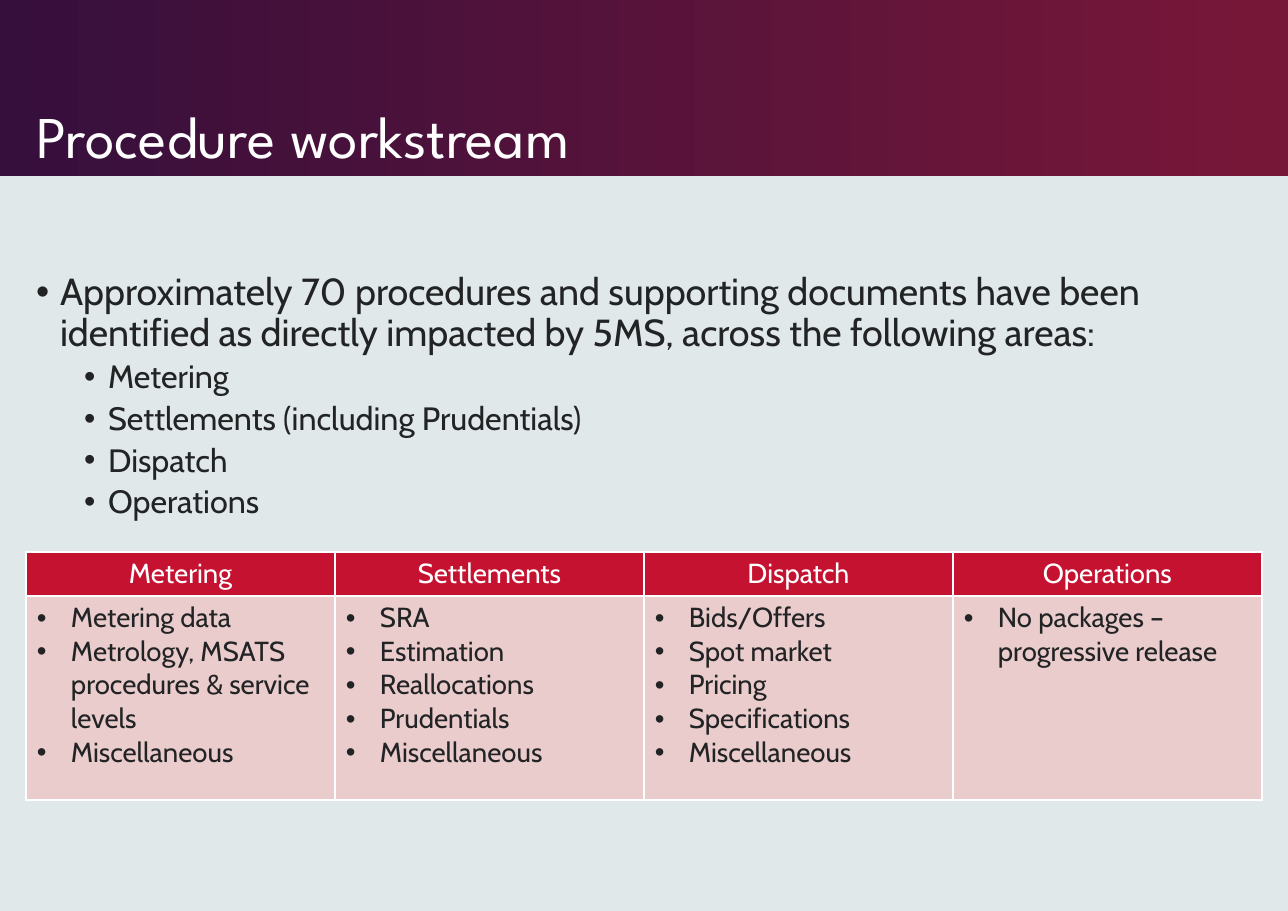
from lxml import etree
from pptx import Presentation
from pptx.dml.color import RGBColor
from pptx.enum.shapes import MSO_SHAPE
from pptx.enum.text import MSO_ANCHOR, MSO_AUTO_SIZE, PP_ALIGN
from pptx.oxml.ns import qn
from pptx.util import Emu, Pt

RECTANGLE = MSO_SHAPE.RECTANGLE
TOP, BOTTOM = MSO_ANCHOR.TOP, MSO_ANCHOR.BOTTOM
NO_AUTOFIT = MSO_AUTO_SIZE.NONE
LEFT, CENTER = PP_ALIGN.LEFT, PP_ALIGN.CENTER

EMU_PER_PX = 8298
BACKGROUND = RGBColor(0xE0, 0xE8, 0xEA)
PURPLE = RGBColor(0x36, 0x0F, 0x3C)
BURGUNDY = RGBColor(0x77, 0x17, 0x38)
CRIMSON = RGBColor(0xC4, 0x12, 0x30)
PINK = RGBColor(0xEA, 0xCC, 0xCD)
WHITE = RGBColor(0xFF, 0xFF, 0xFF)
INK = RGBColor(0x22, 0x23, 0x24)
TITLE_FONT, TEXT_FONT = "League Spartan", "Cabin"

TITLE = "Procedure workstream"
INTRO = ("Approximately 70 procedures and supporting documents have been "
         "identified as directly impacted by 5MS, across the following areas:")
AREAS = ["Metering", "Settlements (including Prudentials)", "Dispatch", "Operations"]
PACKAGES = {
    "Metering": ["Metering data", "Metrology, MSATS procedures & service levels",
                 "Miscellaneous"],
    "Settlements": ["SRA", "Estimation", "Reallocations", "Prudentials", "Miscellaneous"],
    "Dispatch": ["Bids/Offers", "Spot market", "Pricing", "Specifications", "Miscellaneous"],
    "Operations": ["No packages – progressive release"],
}


def px(length):
    return Emu(length * EMU_PER_PX)


def apply(target, formats):
    for attribute, value in formats.items():
        setattr(target, attribute, value)


def place(part, box):
    apply(part, dict(zip(("left", "top", "width", "height"), map(px, box))))


def set_insets(target):
    apply(target, {"margin_left": px(11), "margin_right": px(11),
                   "margin_top": px(5), "margin_bottom": px(5)})


def add_bullet(paragraph, text_start, hang):
    properties = paragraph._p.get_or_add_pPr()
    properties.set("marL", str(px(text_start)))
    properties.set("indent", str(-px(hang)))
    etree.SubElement(properties, qn("a:buFont"), typeface="Arial")
    etree.SubElement(properties, qn("a:buChar"), char="•")


def write(paragraph, text, size, color, font=TEXT_FONT, **formats):
    apply(paragraph, formats)
    run = paragraph.add_run()
    run.text = text
    apply(run.font, {"name": font, "size": Pt(size), "bold": False})
    run.font.color.rgb = color


def paragraphs(frame, count):
    yield frame.paragraphs[0]
    for _ in range(count - 1):
        yield frame.add_paragraph()


def add_banner(slide, box):
    banner = slide.shapes.add_shape(RECTANGLE, *map(px, box))
    banner.shadow.inherit = False
    banner.line.fill.background()
    banner.fill.gradient()
    banner.fill.gradient_angle = 0
    for stop, color, position in zip(banner.fill.gradient_stops,
                                     (PURPLE, BURGUNDY), (0, 0.99)):
        stop.color.rgb = color
        stop.position = position
    slide.shapes._spTree.insert(2, banner._element)


def fill_title(title, box):
    place(title, box)
    frame = title.text_frame
    set_insets(frame)
    apply(frame, {"vertical_anchor": BOTTOM, "word_wrap": True, "auto_size": NO_AUTOFIT})
    write(frame.paragraphs[0], TITLE, 38.6, WHITE, TITLE_FONT,
          alignment=LEFT, line_spacing=0.9)


def fill_body(body, box):
    place(body, box)
    frame = body.text_frame
    set_insets(frame)
    apply(frame, {"vertical_anchor": TOP, "word_wrap": True, "auto_size": NO_AUTOFIT})
    intro, *area_lines = paragraphs(frame, 1 + len(AREAS))
    add_bullet(intro, 24, 24)
    write(intro, INTRO, 24.6, INK, line_spacing=0.9, space_before=Pt(0))
    for line, area in zip(area_lines, AREAS):
        add_bullet(line, 72, 24)
        write(line, area, 21.1, INK, level=1, line_spacing=0.9, space_before=Pt(4.4))


def style_cell(cell, color):
    set_insets(cell)
    properties = cell._tc.get_or_add_tcPr()
    for side in ("L", "R", "T", "B"):
        border = etree.SubElement(properties, qn(f"a:ln{side}"), w=str(Pt(1)))
        solid = etree.SubElement(border, qn("a:solidFill"))
        etree.SubElement(solid, qn("a:srgbClr"), val=str(WHITE))
    cell.fill.solid()
    cell.fill.fore_color.rgb = color


def add_packages(slide, box):
    row_heights = (44, box[3] - 44)
    table = slide.shapes.add_table(2, len(PACKAGES), *map(px, box)).table
    table.horz_banding = False
    for row, height in zip(table.rows, row_heights):
        row.height = px(height)
    for index, (area, packages) in enumerate(PACKAGES.items()):
        table.columns[index].width = px(box[2] // len(PACKAGES))
        heading, content = table.cell(0, index), table.cell(1, index)
        style_cell(heading, CRIMSON)
        style_cell(content, PINK)
        write(heading.text_frame.paragraphs[0], area, 18, WHITE, alignment=CENTER)
        lines = paragraphs(content.text_frame, len(packages))
        for line, package in zip(lines, packages):
            add_bullet(line, 34, 34)
            write(line, package, 18, INK)


def main():
    deck = Presentation()
    apply(deck, {"slide_width": px(1288), "slide_height": px(911)})
    slide = deck.slides.add_slide(deck.slide_layouts[1])
    slide.background.fill.solid()
    slide.background.fill.fore_color.rgb = BACKGROUND
    add_banner(slide, (0, 0, 1288, 176))
    fill_title(slide.shapes.title, (25, 18, 951, 158))
    fill_body(slide.placeholders[1], (25, 268, 1236, 460))
    add_packages(slide, (26, 552, 1236, 248))
    deck.save("out.pptx")


if __name__ == "__main__":
    main()
